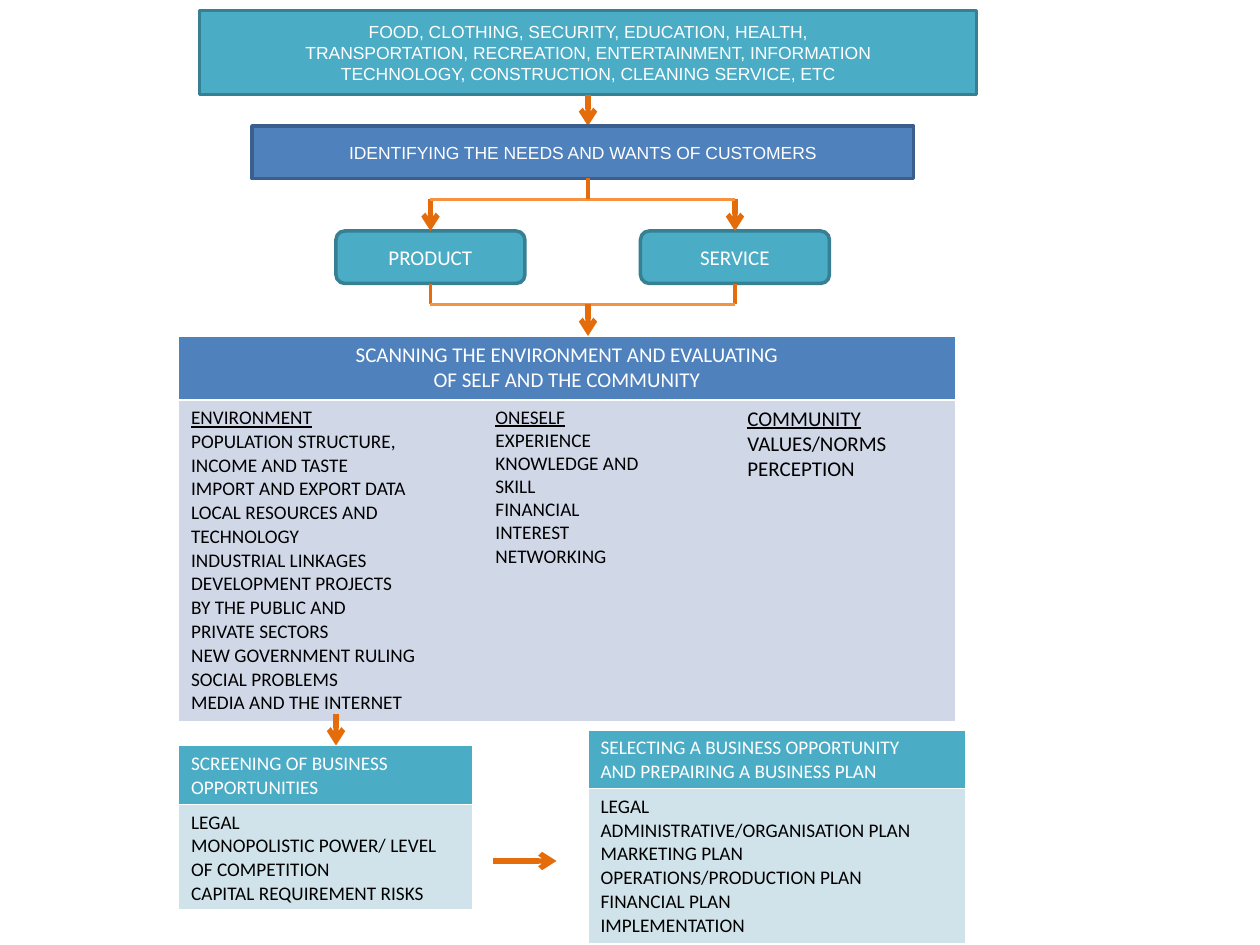
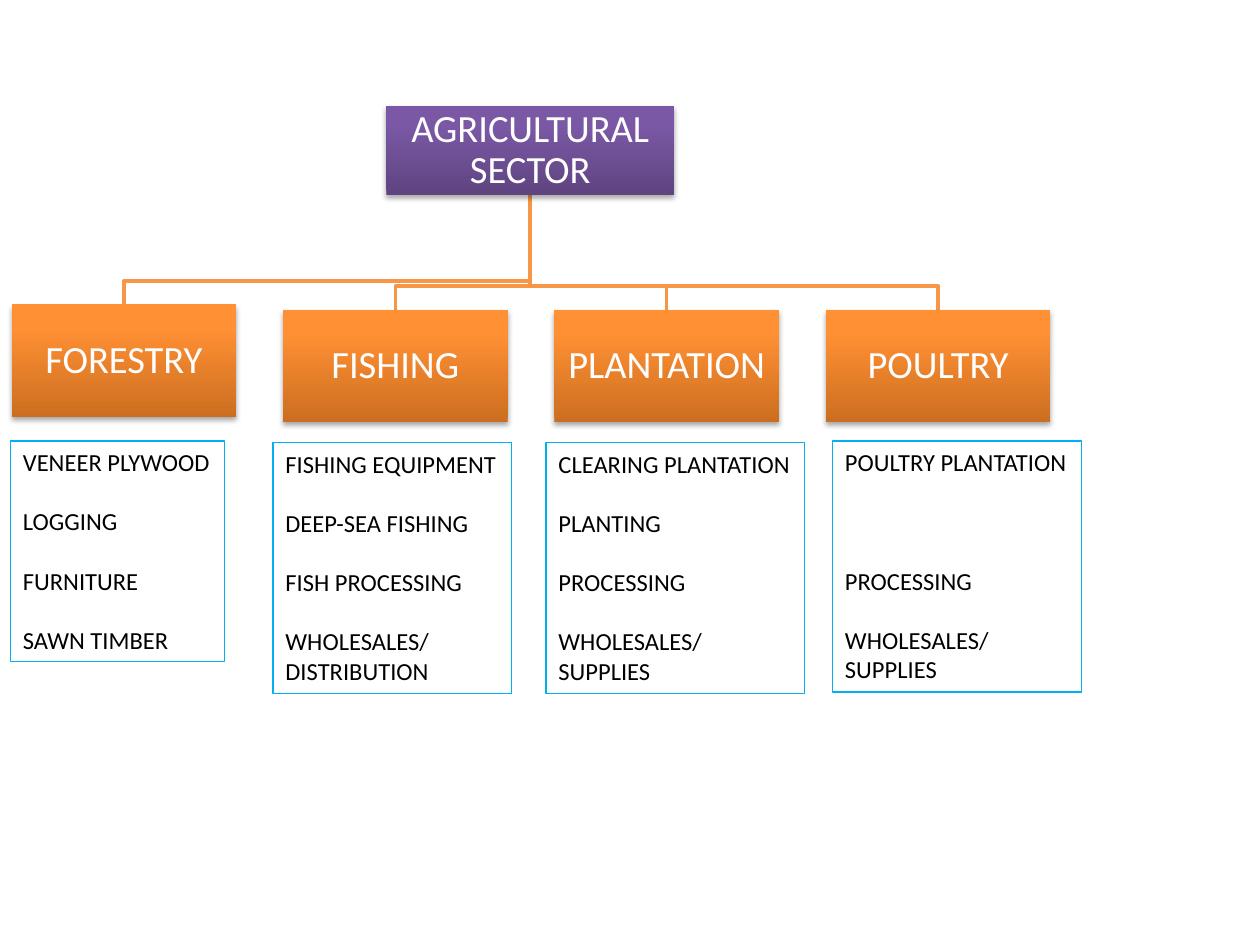
import copy

import lxml.etree
import pptx
import pptx.dml.color
import pptx.enum.shapes
import pptx.enum.text
import pptx.oxml.ns
import pptx.util

SHAPE = pptx.enum.shapes.MSO_SHAPE
ALIGN = pptx.enum.text.PP_ALIGN
ANCHOR = pptx.enum.text.MSO_ANCHOR
qn = pptx.oxml.ns.qn

WHITE, BLACK = "FFFFFF", "000000"
TEAL, TEAL_EDGE, TEAL_PALE = "4BACC6", "377F92", "D0E3EA"
BLUE, BLUE_EDGE, BLUE_PALE = "4F81BD", "3A5F8C", "D0D8E8"
ARROW, BUS, BRANCH, FRAME = "E46C0A", "F69240", "F79646", "00B0F0"
PURPLE_BLEND = ((0, "5F4480"), (0.8, "7B58A6"), (1, "7C57A8"))
ORANGE_BLEND = ((0, "CC6E20"), (0.8, "FF9034"), (1, "FF9136"))
LINE_HEIGHT = 1.22


def colour(code):
    return pptx.dml.color.RGBColor.from_string(code)


def grid(count):
    """Turn grid steps (twelve to the inch) into a length."""
    return pptx.util.Inches(count / 12)


def write(frame, lines, size=11, color=BLACK, font="Calibri", align=ALIGN.LEFT,
          heading=False, gaps=None, spacing=None):
    """Write one paragraph per line; gaps counts the empty lines before each."""
    gaps = gaps or [0] * len(lines)
    for index, (line, gap) in enumerate(zip(lines, gaps)):
        para = frame.paragraphs[0] if index == 0 else frame.add_paragraph()
        para.alignment = align
        if spacing:
            para.line_spacing = spacing
        if gap:
            para.space_before = pptx.util.Pt(round(gap * size * LINE_HEIGHT))
        span = para.add_run()
        span.text = line
        span.font.size = pptx.util.Pt(size)
        span.font.name = font
        span.font.bold = False
        span.font.color.rgb = colour(color)
        if heading and index == 0:
            span.font.underline = True


class Sketch:
    """Draws on the current page, on a grid of 120 columns by 90 rows."""

    def __init__(self):
        self.deck = pptx.Presentation()
        self.deck.slide_width, self.deck.slide_height = grid(120), grid(90)
        self.page = None

    def new_page(self):
        self.page = self.deck.slides.add_slide(self.deck.slide_layouts[6])

    def box(self, place, lines, fill=None, edge=None, width=2, kind=SHAPE.RECTANGLE,
            **format):
        box = self.page.shapes.add_shape(kind, *map(grid, place))
        box.shadow.inherit = False
        if fill:
            box.fill.solid()
            box.fill.fore_color.rgb = colour(fill)
        else:
            box.fill.background()
        if edge:
            box.line.color.rgb = colour(edge)
            box.line.width = pptx.util.Pt(width)
        else:
            box.line.fill.background()
        box.text_frame.word_wrap = True
        box.text_frame.vertical_anchor = ANCHOR.MIDDLE
        write(box.text_frame, lines, **{"color": WHITE, "align": ALIGN.CENTER, **format})
        return box

    def blended_box(self, place, label, blend):
        """Box with a rising gradient and a soft shadow below."""
        box = self.box(place, [label], size=22, spacing=0.9)
        frame = box.text_frame
        frame.margin_left = frame.margin_right = pptx.util.Inches(0.02)
        frame.margin_top = frame.margin_bottom = pptx.util.Inches(0.02)
        box.fill.gradient()
        box.fill.gradient_angle = 90
        properties = box._element.spPr
        stops = properties.find(".//" + qn("a:gsLst"))
        stops.append(copy.deepcopy(stops[0]))
        for stop, (position, code) in zip(box.fill.gradient_stops, blend):
            stop.position = position
            stop.color.rgb = colour(code)
        shadow = lxml.etree.SubElement(
            properties.find(qn("a:effectLst")), qn("a:outerShdw"),
            blurRad="40000", dist="23000", dir="5400000", rotWithShape="0")
        shade = lxml.etree.SubElement(shadow, qn("a:srgbClr"), val=BLACK)
        lxml.etree.SubElement(shade, qn("a:alpha"), val="35000")

    def framed_list(self, place, lines, gaps):
        box = self.box(place, lines, edge=FRAME, width=0.75, size=14, color=BLACK,
                       align=ALIGN.LEFT, gaps=gaps)
        self.fit(box.text_frame)

    def fit(self, frame):
        frame.word_wrap = False
        frame.vertical_anchor = ANCHOR.TOP
        frame.auto_size = pptx.enum.text.MSO_AUTO_SIZE.SHAPE_TO_FIT_TEXT

    def text(self, place, lines, **format):
        box = self.page.shapes.add_textbox(*map(grid, place))
        self.fit(box.text_frame)
        write(box.text_frame, lines, **format)

    def line(self, start, end, color=ARROW, width=2.25, arrow=False,
             source=None, target=None):
        """Straight line, leaving the bottom of source or reaching the top of target."""
        line = self.page.shapes.add_connector(
            pptx.enum.shapes.MSO_CONNECTOR.STRAIGHT, *map(grid, (*start, *end)))
        if source is not None:
            line.begin_connect(source, 2)
        if target is not None:
            line.end_connect(target, 0)
        line.line.color.rgb = colour(color)
        line.line.width = pptx.util.Pt(3 if arrow else width)
        properties = line._element.spPr
        if arrow:
            lxml.etree.SubElement(properties.find(qn("a:ln")), qn("a:tailEnd"), type="arrow")
        lxml.etree.SubElement(properties, qn("a:effectLst"))

    def branch(self, points):
        points = [(grid(x), grid(y)) for x, y in points]
        builder = self.page.shapes.build_freeform(*points[0])
        builder.add_line_segments(points[1:], close=False)
        path = builder.convert_to_shape()
        path.shadow.inherit = False
        path.fill.background()
        path.line.color.rgb = colour(BRANCH)
        path.line.width = pptx.util.Pt(2)

    def table(self, left, top, width, heights, fills, head, body, head_format=None,
              heading=False):
        table = self.page.shapes.add_table(
            2, 1, grid(left), grid(top), grid(width), grid(sum(heights))).table
        formats = ({"color": WHITE, **(head_format or {})}, {"heading": heading})
        for row, lines in enumerate((head, body)):
            table.rows[row].height = grid(heights[row])
            cell = table.cell(row, 0)
            cell.fill.solid()
            cell.fill.fore_color.rgb = colour(fills[row])
            write(cell.text_frame, lines, **formats[row])


def draw_opportunity_flow(sketch):
    sketch.new_page()
    middle = 56
    fields = sketch.box(
        (19, 1, 74, 8),
        ["FOOD, CLOTHING, SECURITY, EDUCATION, HEALTH,",
         "TRANSPORTATION, RECREATION, ENTERTAINMENT, INFORMATION",
         "TECHNOLOGY, CONSTRUCTION, CLEANING SERVICE, ETC"],
        TEAL, TEAL_EDGE, size=10, font="Arial")
    sketch.line((middle, 9), (middle, 12), arrow=True, source=fields)
    sketch.box((24, 12, 63, 5), ["IDENTIFYING THE NEEDS AND WANTS OF CUSTOMERS"],
               BLUE, BLUE_EDGE, size=10, font="Arial")

    centres = (41, 70)
    for centre, label in zip(centres, ("PRODUCT", "SERVICE")):
        offer = sketch.box((centre - 9, 22, 18, 5), [label], TEAL, TEAL_EDGE,
                           kind=SHAPE.ROUNDED_RECTANGLE, size=12)
        sketch.line((centre, 19), (centre, 22), arrow=True, target=offer)
        sketch.line((centre, 27), (centre, 29), source=offer)
    for row in (19, 29):
        sketch.line((centres[0], row), (centres[1], row), BUS)
    sketch.line((middle, 17), (middle, 19))

    sketch.table(
        17, 32, 74, (6, 30), (BLUE, BLUE_PALE),
        ["SCANNING THE ENVIRONMENT AND EVALUATING", "OF SELF AND THE COMMUNITY"],
        ["ENVIRONMENT", "POPULATION STRUCTURE,", "INCOME AND TASTE",
         "IMPORT AND EXPORT DATA", "LOCAL RESOURCES AND", "TECHNOLOGY",
         "INDUSTRIAL LINKAGES", "DEVELOPMENT PROJECTS", "BY THE PUBLIC AND",
         "PRIVATE SECTORS", "NEW GOVERNMENT RULING", "SOCIAL PROBLEMS",
         "MEDIA AND THE INTERNET"],
        head_format={"size": 12, "align": ALIGN.CENTER}, heading=True)
    sketch.line((middle, 29), (middle, 32), arrow=True)
    sketch.text((46, 38, 16.2, 16.8),
                ["ONESELF", "EXPERIENCE", "KNOWLEDGE AND", "SKILL", "FINANCIAL",
                 "INTEREST", "NETWORKING"], heading=True)
    sketch.text((70, 38, 15.8, 8.5), ["COMMUNITY", "VALUES/NORMS", "PERCEPTION"],
                size=12, heading=True)

    sketch.table(
        17, 71, 28, (5.4, 9.9), (TEAL, TEAL_PALE),
        ["SCREENING OF BUSINESS OPPORTUNITIES"],
        ["LEGAL", "MONOPOLISTIC POWER/ LEVEL OF COMPETITION",
         "CAPITAL REQUIREMENT RISKS"])
    sketch.line((32, 68), (32, 71), arrow=True)
    sketch.table(
        56, 69.5, 36, (5.4, 14.8), (TEAL, TEAL_PALE),
        ["SELECTING A BUSINESS OPPORTUNITY", "AND PREPAIRING A BUSINESS PLAN"],
        ["LEGAL", "ADMINISTRATIVE/ORGANISATION PLAN", "MARKETING PLAN",
         "OPERATIONS/PRODUCTION PLAN", "FINANCIAL PLAN", "IMPLEMENTATION"])
    sketch.line((47, 82), (53, 82), arrow=True)


def draw_agricultural_sector(sketch):
    sketch.new_page()
    root_x, root_bottom = 50.5, 18.6
    width, height, step = 21.4, 10.7, 25.85
    sectors = (
        ("FORESTRY", 29, (1, 42, 20.4, 21),
         ["VENEER PLYWOOD", "LOGGING", "FURNITURE", "SAWN TIMBER"], (0, 1, 1, 1)),
        ("FISHING", 29.5, (26, 42.15, 22.7, 23.9),
         ["FISHING EQUIPMENT", "DEEP-SEA FISHING", "FISH PROCESSING", "WHOLESALES/",
          "DISTRIBUTION"], (0, 1, 1, 1, 0)),
        ("PLANTATION", 29.5, (52, 42.15, 24.6, 23.9),
         ["CLEARING PLANTATION", "PLANTING", "PROCESSING", "WHOLESALES/", "SUPPLIES"],
         (0, 1, 1, 1, 0)),
        ("POULTRY", 29.5, (79.3, 42, 23.7, 23.9),
         ["POULTRY PLANTATION", "PROCESSING", "WHOLESALES/", "SUPPLIES"], (0, 3, 1, 0)),
    )
    lefts = [1.1 + step * index for index in range(len(sectors))]
    for left, (_, top, *_) in zip(lefts, sectors):
        centre, bend = left + width / 2, top - 2.25
        sketch.branch([(root_x, root_bottom), (root_x, bend), (centre, bend), (centre, top)])
    sketch.blended_box((36.8, 10.1, 27.4, 8.5), "AGRICULTURAL SECTOR", PURPLE_BLEND)
    for left, (name, top, place, activities, gaps) in zip(lefts, sectors):
        sketch.blended_box((left, top, width, height), name, ORANGE_BLEND)
        sketch.framed_list(place, activities, gaps)


def main():
    sketch = Sketch()
    draw_opportunity_flow(sketch)
    draw_agricultural_sector(sketch)
    sketch.deck.save("out.pptx")


if __name__ == "__main__":
    main()
